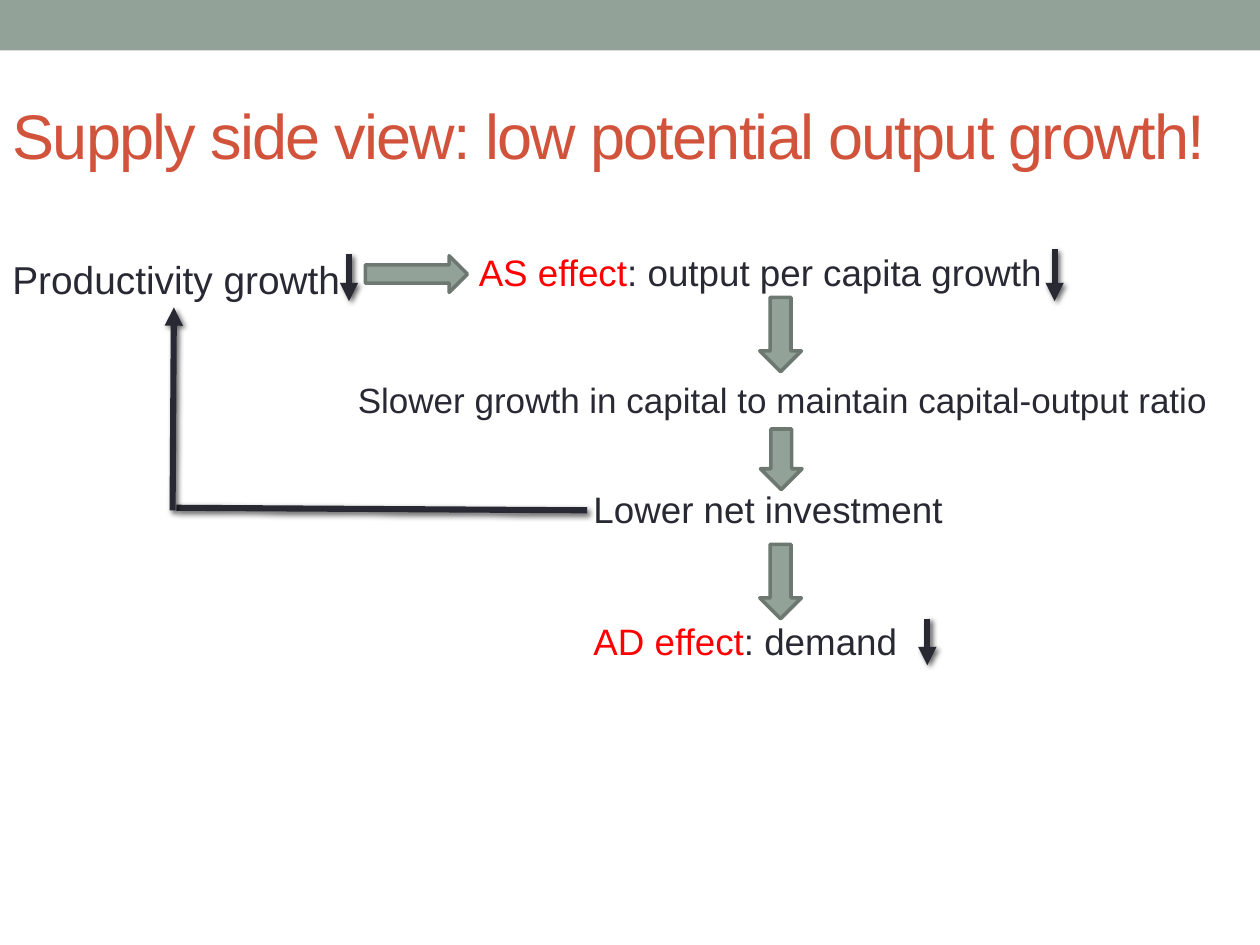
import pptx
import pptx.util
import pptx.dml.color
import pptx.enum.shapes
import pptx.enum.text
import pptx.oxml
import pptx.oxml.ns

Inches, Pt = pptx.util.Inches, pptx.util.Pt
RGB = pptx.dml.color.RGBColor.from_string
SHAPE = pptx.enum.shapes.MSO_SHAPE
C = {"sage": "93A299", "edge": "6D7871", "title": "D2533C", "ink": "292934", "red": "FF0000"}
NS = pptx.oxml.ns.nsdecls("a")
SHADOW = (f'<a:effectLst {NS}><a:outerShdw blurRad="38100" dist="25400" dir="2700000" rotWithShape="0">'
          '<a:srgbClr val="000000"><a:alpha val="60000"/></a:srgbClr></a:outerShdw></a:effectLst>')

prs = pptx.Presentation()
prs.slide_width, prs.slide_height = Inches(10), Inches(7.5)
s = prs.slides.add_slide(prs.slide_layouts[5])


def add_block(kind, x, y, w, h):
    sp = s.shapes.add_shape(kind, Inches(x), Inches(y), Inches(w), Inches(h))
    sp.shadow.inherit = False
    sp.fill.solid()
    sp.fill.fore_color.rgb = RGB(C["sage"])
    return sp


# Top band
add_block(SHAPE.RECTANGLE, 0, 0, 10, 0.4).line.fill.background()

# Title
sp = s.shapes.title
sp.left, sp.top, sp.width, sp.height = Inches(0), Inches(0.54), Inches(10), Inches(1.05)
tf = sp.text_frame
tf.word_wrap = True
tf.auto_size = pptx.enum.text.MSO_AUTO_SIZE.NONE
tf.vertical_anchor = pptx.enum.text.MSO_ANCHOR.MIDDLE
p = tf.paragraphs[0]
p.alignment = pptx.enum.text.PP_ALIGN.LEFT
r = p.add_run()
r.text = "Supply side view: low potential output growth!"
r.font.name, r.font.size = "Arial", Pt(36)
r.font.color.rgb = RGB(C["title"])
r.font._element.set("spc", "-100")

# Steps of the chain: box, size, line spacing, space before, insets, red lead, text
steps = [
    (0, 1.98, 3.73, 0.45, 22.2, 1, 4.4, (0.1, 0.05), "", "Productivity growth"),
    (3.73, 1.98, 4.93, 0.94, 21, 0.9, 10, (0.07, 0.04), "AS effect", ": output per capita growth"),
    (2.77, 3, 7, 0.45, 20, 0.9, 10, (0.07, 0.04), "",
     "Slower growth in capital to maintain capital-output ratio"),
    (4.64, 3.86, 3.73, 0.45, 21, 0.9, 10, (0.07, 0.04), "", "Lower net investment"),
    (4.64, 4.91, 3.73, 0.45, 21, 0.9, 10, (0.07, 0.04), "AD effect", ": demand"),
]
for x, y, w, h, size, spacing, before, (side, top), lead, text in steps:
    tf = s.shapes.add_textbox(Inches(x), Inches(y), Inches(w), Inches(h)).text_frame
    tf.word_wrap = True
    tf.margin_left = tf.margin_right = Inches(side)
    tf.margin_top = tf.margin_bottom = Inches(top)
    p = tf.paragraphs[0]
    p.line_spacing, p.space_before = spacing, Pt(before)
    p.font.name, p.font.size = "Arial", Pt(size)
    for words, color in ((lead, "red"), (text, "ink")):
        if words:
            r = p.add_run()
            r.text = words
            r.font.color.rgb = RGB(C[color])

# Block arrows between steps
for x, y, w, h, turn in [(2.9, 2.03, 0.81, 0.29, 0), (5.9, 2.49, 0.59, 0.33, 90),
                         (5.96, 3.48, 0.48, 0.33, 90), (5.9, 4.45, 0.59, 0.33, 90)]:
    sp = add_block(SHAPE.RIGHT_ARROW, x, y, w, h)
    sp.rotation = turn
    sp.line.color.rgb = RGB(C["edge"])
    sp.line.width = Pt(2.08)

# Decline markers, then the feedback line to productivity
lines = [
    (2.77, 2.02, 2.77, 2.39, True), (8.37, 1.98, 8.37, 2.39, True), (7.36, 4.91, 7.36, 5.28, True),
    (4.66, 4.05, 1.4, 4.03, False), (1.37, 4.05, 1.38, 2.44, True),
]
for x1, y1, x2, y2, arrow in lines:
    sp = s.shapes.add_connector(pptx.enum.shapes.MSO_CONNECTOR.STRAIGHT,
                                Inches(x1), Inches(y1), Inches(x2), Inches(y2))
    sp.line.color.rgb = RGB(C["ink"])
    sp.line.width = Pt(3.5)
    if arrow:
        sp.line._get_or_add_ln().append(pptx.oxml.parse_xml(f'<a:tailEnd {NS} type="triangle"/>'))
    sp._element.spPr.append(pptx.oxml.parse_xml(SHADOW))

prs.save("out.pptx")
